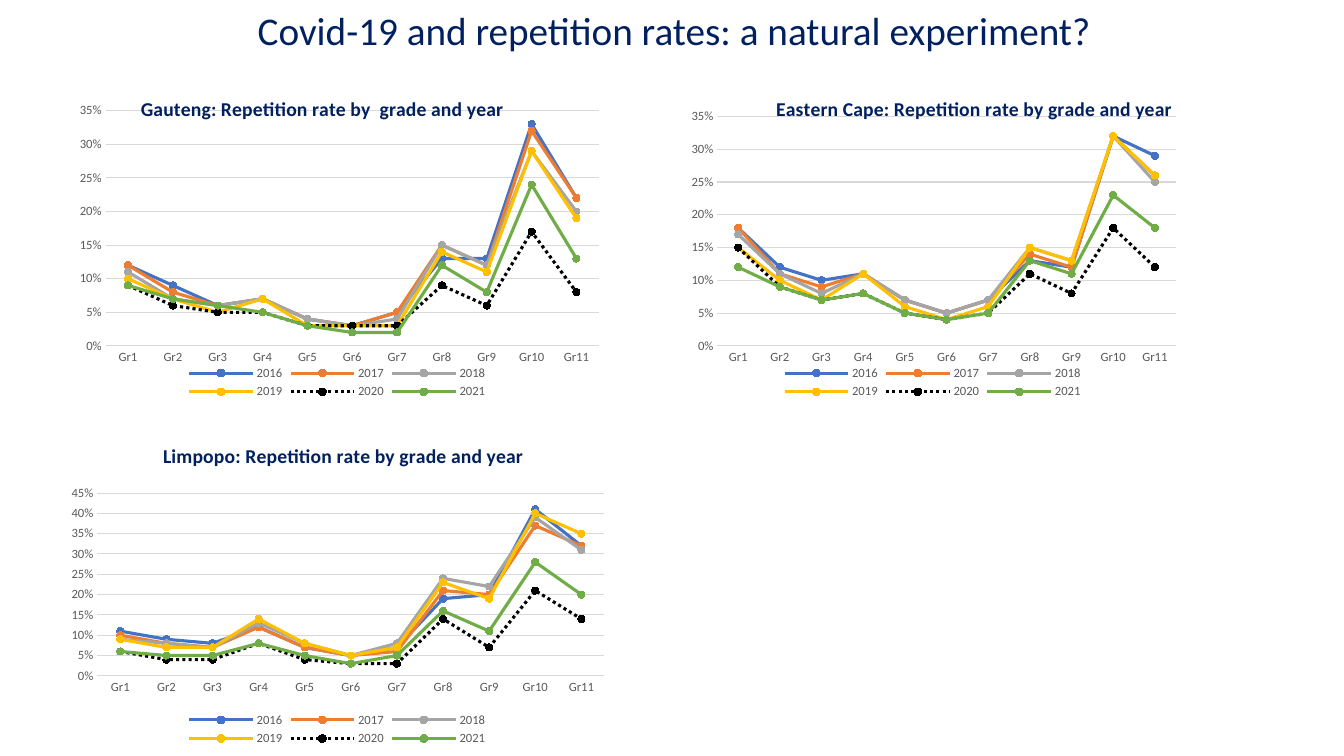
"""Build the slide comparing grade repetition rates in three provinces by year."""
from dataclasses import dataclass
from typing import Any

from lxml.etree import SubElement
from pptx import Presentation
from pptx.chart.chart import Chart
from pptx.chart.data import CategoryChartData
from pptx.dml.color import RGBColor
from pptx.enum.chart import XL_CHART_TYPE as ChartType
from pptx.enum.chart import XL_LEGEND_POSITION as LegendPosition
from pptx.enum.chart import XL_MARKER_STYLE as Marker
from pptx.enum.chart import XL_TICK_MARK as TickMark
from pptx.enum.dml import MSO_LINE as Dash
from pptx.enum.text import MSO_ANCHOR as Anchor
from pptx.enum.text import MSO_AUTO_SIZE as AutoSize
from pptx.enum.text import PP_ALIGN as Align
from pptx.oxml.ns import qn
from pptx.util import Inches, Pt

NAVY = RGBColor(0x00, 0x20, 0x60)
GREY = RGBColor(0x59, 0x59, 0x59)
PALE_GREY = RGBColor(0xD9, 0xD9, 0xD9)
BLACK = RGBColor(0x00, 0x00, 0x00)
YEAR_COLORS = {
    "2016": RGBColor(0x44, 0x72, 0xC4),
    "2017": RGBColor(0xED, 0x7D, 0x31),
    "2018": RGBColor(0xA5, 0xA5, 0xA5),
    "2019": RGBColor(0xFF, 0xC0, 0x00),
    "2020": BLACK,
    "2021": RGBColor(0x70, 0xAD, 0x47),
}
GRADES = [f"Gr{grade}" for grade in range(1, 12)]
FONT = "Calibri"
CHART_HEIGHT = 3.15


@dataclass(frozen=True)
class Province:
    """Repetition percentages of one province, and the place of its chart."""

    heading: str
    left: float
    top: float
    width: float
    heading_spot: dict[str, float]
    plot_spot: dict[str, float]
    axis_top: float
    percentages: tuple[tuple[int, ...], ...]


PROVINCES = (
    Province(
        "Gauteng: Repetition rate by  grade and year", 0.59, 0.85, 5.51,
        {"x": 0.14, "y": 0.02},
        {"x": 0.083, "y": 0.079, "w": 0.888, "h": 0.741}, 0.35,
        (
            (12, 9, 6, 7, 4, 3, 5, 13, 13, 33, 22),
            (12, 8, 6, 7, 4, 3, 5, 15, 12, 32, 22),
            (11, 7, 6, 7, 4, 3, 4, 15, 12, 29, 20),
            (10, 7, 5, 7, 3, 3, 3, 14, 11, 29, 19),
            (9, 6, 5, 5, 3, 3, 3, 9, 6, 17, 8),
            (9, 7, 6, 5, 3, 2, 2, 12, 8, 24, 13),
        ),
    ),
    Province(
        "Limpopo: Repetition rate by grade and year", 0.59, 4.29, 5.51,
        {"x": 0.18, "y": 0.02},
        {"x": 0.068, "y": 0.191, "w": 0.913, "h": 0.576}, 0.45,
        (
            (11, 9, 8, 12, 7, 5, 7, 19, 20, 41, 32),
            (10, 8, 7, 12, 7, 5, 6, 21, 20, 37, 32),
            (9, 8, 7, 13, 8, 5, 8, 24, 22, 39, 31),
            (9, 7, 7, 14, 8, 5, 7, 23, 19, 40, 35),
            (6, 4, 4, 8, 4, 3, 3, 14, 7, 21, 14),
            (6, 5, 5, 8, 5, 3, 5, 16, 11, 28, 20),
        ),
    ),
    Province(
        "Eastern Cape: Repetition rate by grade and year", 6.69, 0.85, 5.12,
        {"x": 0.19, "y": 0.02},
        {"x": 0.083, "y": 0.097, "w": 0.888, "h": 0.723}, 0.35,
        (
            (18, 12, 10, 11, 7, 5, 7, 13, 12, 32, 29),
            (18, 11, 9, 11, 7, 5, 7, 14, 12, 32, 26),
            (17, 11, 8, 11, 7, 5, 7, 15, 13, 32, 25),
            (15, 10, 7, 11, 6, 4, 6, 15, 13, 32, 26),
            (15, 9, 7, 8, 5, 4, 5, 11, 8, 18, 12),
            (12, 9, 7, 8, 5, 4, 5, 13, 11, 23, 18),
        ),
    ),
)


def apply(target: Any, values: dict[str, Any]) -> None:
    """Set each named attribute of the target."""
    for name, value in values.items():
        setattr(target, name, value)


def style_font(font: Any, size: float, color: RGBColor, bold: bool = False) -> None:
    """Give a font its face, size, weight and colour."""
    apply(font, {"name": FONT, "size": Pt(size), "bold": bold})
    font.color.rgb = color


def style_line(line: Any, color: RGBColor, width: float) -> None:
    """Give a line its colour and width."""
    line.color.rgb = color
    line.width = Pt(width)


def place(element: Any, spot: dict[str, float]) -> None:
    """Fix a chart part at fractions of the chart area."""
    for old_layout in element.findall(qn("c:layout")):
        element.remove(old_layout)
    layout = SubElement(element, qn("c:layout"))
    is_heading = element.find(qn("c:tx")) is not None
    element.insert(1 if is_heading else 0, layout)
    manual = SubElement(layout, qn("c:manualLayout"))
    if not is_heading:
        SubElement(manual, qn("c:layoutTarget")).set("val", "inner")
    for side in ("x", "y"):
        SubElement(manual, qn(f"c:{side}Mode")).set("val", "edge")
    for side, fraction in spot.items():
        SubElement(manual, qn(f"c:{side}")).set("val", str(fraction))


def style_axes(chart: Chart, axis_top: float) -> None:
    """Format the grade axis and the rate axis."""
    grades, rates = chart.category_axis, chart.value_axis
    for axis in (grades, rates):
        apply(axis, {"major_tick_mark": TickMark.NONE, "minor_tick_mark": TickMark.NONE})
        style_font(axis.tick_labels.font, 9, GREY)
    style_line(grades.format.line, PALE_GREY, 0.75)
    apply(rates, {"minimum_scale": 0, "maximum_scale": axis_top, "major_unit": 0.05})
    apply(rates.tick_labels, {"number_format": "0%", "number_format_is_linked": False})
    rates.format.line.fill.background()
    style_line(rates.major_gridlines.format.line, PALE_GREY, 0.75)


def style_years(chart: Chart) -> None:
    """Colour the line and markers of each year."""
    chart.plots[0].vary_by_categories = False
    for year in chart.plots[0].series:
        color = YEAR_COLORS[year.name]
        year.smooth = False
        style_line(year.format.line, color, 2.25)
        if year.name == "2020":
            year.format.line.dash_style = Dash.ROUND_DOT
        apply(year.marker, {"style": Marker.CIRCLE, "size": 5})
        year.marker.format.fill.solid()
        year.marker.format.fill.fore_color.rgb = color
        style_line(year.marker.format.line, color, 0.75)


def add_province(slide: Any, province: Province) -> None:
    """Draw the line chart of one province."""
    rates = CategoryChartData(number_format="0%")
    rates.categories = GRADES
    for year, percentages in zip(YEAR_COLORS, province.percentages):
        rates.add_series(year, [percentage / 100 for percentage in percentages])
    chart = slide.shapes.add_chart(
        ChartType.LINE_MARKERS, Inches(province.left), Inches(province.top),
        Inches(province.width), Inches(CHART_HEIGHT), rates,
    ).chart
    style_font(chart.font, 10, BLACK)
    apply(chart, {"has_title": True, "has_legend": True})
    apply(chart.legend, {"position": LegendPosition.BOTTOM, "include_in_layout": False})
    style_font(chart.legend.font, 9, GREY)
    heading = chart.chart_title.text_frame.paragraphs[0].add_run()
    heading.text = province.heading
    style_font(heading.font, 14, NAVY, bold=True)
    place(chart.chart_title.element, province.heading_spot)
    place(chart.element.find(".//" + qn("c:plotArea")), province.plot_spot)
    style_axes(chart, province.axis_top)
    style_years(chart)


def add_question(slide: Any) -> None:
    """Fill the title placeholder."""
    question = slide.shapes.title
    apply(question, {"left": Inches(0.38), "top": Inches(0.09),
                     "width": Inches(12.61), "height": Inches(0.48)})
    apply(question.text_frame, {"vertical_anchor": Anchor.MIDDLE, "word_wrap": True,
                                "auto_size": AutoSize.NONE})
    wording = question.text_frame.paragraphs[0]
    apply(wording, {"text": "Covid-19 and repetition rates: a natural experiment?",
                    "alignment": Align.CENTER, "line_spacing": 0.9})
    style_font(wording.runs[0].font, 28, NAVY)


def main() -> None:
    """Build and save the presentation."""
    deck = Presentation()
    apply(deck, {"slide_width": Inches(13.33), "slide_height": Inches(7.5)})
    slide = deck.slides.add_slide(deck.slide_layouts[5])
    add_question(slide)
    for province in PROVINCES:
        add_province(slide, province)
    deck.save("out.pptx")


if __name__ == "__main__":
    main()
